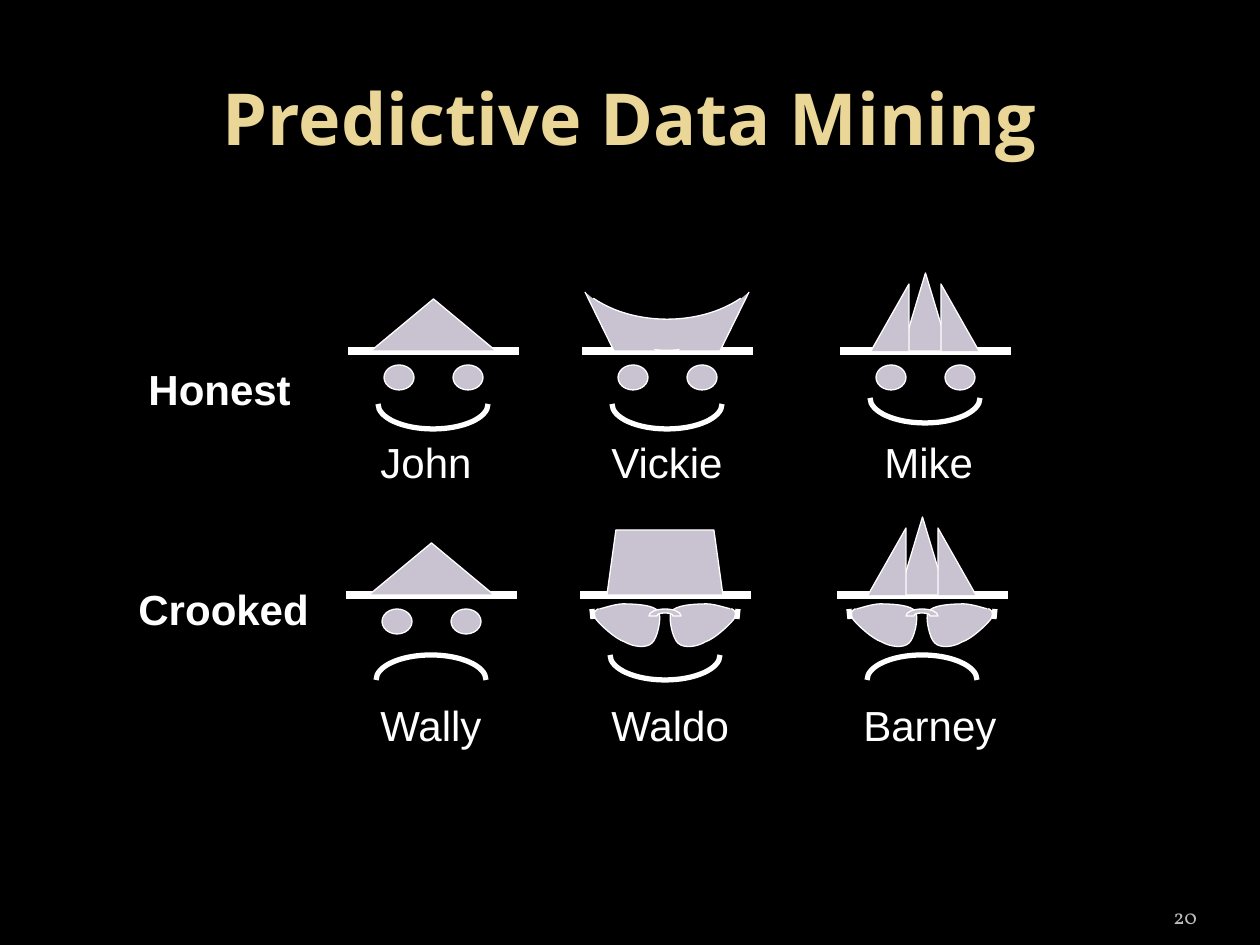
"""Builds the Predictive Data Mining slide: honest and crooked faces."""
from lxml.etree import SubElement
from pptx import Presentation
from pptx.dml.color import RGBColor
from pptx.enum.shapes import MSO_CONNECTOR, MSO_SHAPE
from pptx.enum.text import MSO_ANCHOR, MSO_AUTO_SIZE, PP_ALIGN
from pptx.oxml.ns import qn
from pptx.util import Pt

EMU = 914400 / 126
COLORS = {"background": "000000", "title": "EAD696", "number": "BDBDBD",
          "face": "C9C2D1", "line": "FFFFFF"}

HONEST_BRIM, CROOKED_BRIM = 351, 595
HONEST_NAME, CROOKED_NAME = 430, 693
FACES = [
    dict(name="John", box=(368, HONEST_NAME, 117), center=433, brim=HONEST_BRIM,
         hat="cone", eyes="plain", mouth="smile", mouth_top=404),
    dict(name="Vickie", box=(599, HONEST_NAME, 137), center=667, brim=HONEST_BRIM,
         hat="horns", eyes="plain", mouth="smile", mouth_top=404),
    dict(name="Mike", box=(872, HONEST_NAME, 115), center=925, brim=HONEST_BRIM,
         hat="peaks", eyes="plain", mouth="smile", mouth_top=398),
    dict(name="Wally", box=(368, CROOKED_NAME, 129), center=431, brim=CROOKED_BRIM,
         hat="cone", eyes="plain", mouth="frown", mouth_top=655),
    dict(name="Waldo", box=(599, CROOKED_NAME, 145), center=665, brim=CROOKED_BRIM,
         hat="top hat", eyes="glasses", mouth="smile", mouth_top=655),
    dict(name="Barney", box=(851, CROOKED_NAME, 159), center=922, brim=CROOKED_BRIM,
         hat="peaks", eyes="glasses", mouth="frown", mouth_top=655),
]
GROUPS = [("Honest", (136, 357, 168)), ("Crooked", (126, 577, 198))]

HORN = [(-82, -59), (-53, 0), (-11, 0)]
SIDE_PEAK = [(-16, 0), (-16, -67), (-54, 0)]
TOP_HAT = [(-58, 0), (-49, -65), (49, -65), (58, 0)]
LENS = [(-67, 17), (-63, 16), (-50, 9), (-40, 9), (-30, 8), (-13, 7), (-8, 13),
        (-4, 18), (-6, 40), (-11, 45), (-16, 51), (-29, 51), (-38, 47),
        (-48, 45), (-64, 33), (-69, 28), (-74, 22), (-71, 19), (-68, 17)]
BRIDGE = [(-8, 21), (-8, 19), (-5, 18), (0, 18), (5, 18), (8, 19), (8, 21),
          (8, 21), (16, 21), (16, 21), (16, 17), (9, 14), (0, 14),
          (-9, 14), (-16, 17), (-16, 21)]
MOUTH_HEIGHT = 25
MOUTH_HALF = [(0, 25), (-30, 25), (-55, 14), (-55, 0)]
TEMPLE = [(-72, 24), (-73, 14)]


def emu(px):
    return round(px * EMU)


def rgb(key):
    return RGBColor.from_string(COLORS[key])


def add_text(shapes, text, box, *, size=24, font="Arial", color="line", bold=False,
             align=PP_ALIGN.LEFT, anchor=MSO_ANCHOR.TOP, wrap=False, side_inset=None):
    frame = shapes.add_textbox(*map(emu, box)).text_frame
    frame.word_wrap = wrap
    frame.auto_size = MSO_AUTO_SIZE.NONE if wrap else MSO_AUTO_SIZE.SHAPE_TO_FIT_TEXT
    frame.vertical_anchor = anchor
    if side_inset is not None:
        frame.margin_left = frame.margin_right = side_inset
    paragraph = frame.paragraphs[0]
    paragraph.alignment = align
    run = paragraph.add_run()
    run.text = text
    run.font.size, run.font.name, run.font.bold = Pt(size), font, bold
    run.font.color.rgb = rgb(color)


def paint(shape, filled=True, width=0.75):
    shape.shadow.inherit = False
    if filled:
        shape.fill.solid()
        shape.fill.fore_color.rgb = rgb("face")
    else:
        shape.fill.background()
    shape.line.color.rgb = rgb("line")
    shape.line.width = Pt(width)
    return shape


def bend(shape):
    """Turns every three line segments into one cubic curve."""
    segments = list(shape._element.iter(qn("a:lnTo")))
    for first, second, third in zip(*[iter(segments)] * 3):
        first.tag = qn("a:cubicBezTo")
        for segment in (second, third):
            first.append(segment[0])
            segment.getparent().remove(segment)
    return shape


def mirror(points):
    return [(-x, y) for x, y in points]


class Face:
    """Draws parts of one face, measured from the middle of its brim."""

    def __init__(self, shapes, center, brim):
        self.shapes, self.center, self.brim = shapes, center, brim

    def place(self, point):
        return emu(self.center + point[0]), emu(self.brim + point[1])

    def outline(self, points, close=False, **style):
        start, *rest = map(self.place, points)
        builder = self.shapes.build_freeform(*start, scale=1.0)
        builder.add_line_segments(rest, close=close)
        return paint(builder.convert_to_shape(), **style)

    def curve(self, controls, **style):
        return bend(self.outline(controls, **style))

    def preset(self, kind, x, y, width, height):
        return paint(self.shapes.add_shape(kind, *self.place((x, y)),
                                           emu(width), emu(height)))

    def stroke(self, start, end, width):
        line = self.shapes.add_connector(MSO_CONNECTOR.STRAIGHT,
                                         *self.place(start), *self.place(end))
        line.line.color.rgb = rgb("line")
        line.line.width = Pt(width)
        SubElement(line._element.spPr, qn("a:effectLst"))

    def eyes(self, kind):
        if kind == "plain":
            for x in (-49, 20):
                self.preset(MSO_SHAPE.OVAL, x, 14, 30, 25)
            return
        self.curve(LENS).rotation = 6.6
        self.curve(mirror(LENS)).rotation = 353.2
        self.curve(BRIDGE, close=True)
        for temple in (TEMPLE, mirror(TEMPLE)):
            self.stroke(*temple, 3)

    def mouth(self, kind, top):
        half = MOUTH_HALF
        if kind == "frown":
            half = [(x, MOUTH_HEIGHT - y) for x, y in half]
        half = [(x, y + top - self.brim) for x, y in half]
        for side in (mirror(half), half):
            self.curve(side, filled=False, width=3)

    def hat(self, kind):
        self.stroke((-85, 0), (86, 0), 4.5)
        if kind == "cone":
            self.preset(MSO_SHAPE.ISOSCELES_TRIANGLE, -62, -52, 125, 52)
        elif kind == "top hat":
            self.outline(TOP_HAT, close=True)
        elif kind == "peaks":
            self.preset(MSO_SHAPE.ISOSCELES_TRIANGLE, -23, -78, 47, 78)
            for side in (mirror(SIDE_PEAK), SIDE_PEAK):
                self.outline(side)
        else:
            crown = self.preset(MSO_SHAPE.MOON, -26, -100, 52, 147)
            crown.adjustments[0] = 0.6
            crown.rotation = 270
            crown._element.spPr.find(qn("a:xfrm")).set("flipV", "1")
            for side in (HORN, mirror(HORN)):
                self.outline(side)


def main():
    prs = Presentation()
    prs.slide_width, prs.slide_height = emu(1260), emu(945)
    slide = prs.slides.add_slide(prs.slide_layouts[6])
    slide.background.fill.solid()
    slide.background.fill.fore_color.rgb = rgb("background")

    add_text(slide.shapes, "Predictive Data Mining", (63, 38, 1134, 157), size=41,
             font="Open Sans", color="title", bold=True, align=PP_ALIGN.CENTER,
             anchor=MSO_ANCHOR.MIDDLE, wrap=True)
    add_text(slide.shapes, "20", (1092, 885, 105, 50), size=12, font="Vollkorn",
             color="number", align=PP_ALIGN.RIGHT, anchor=MSO_ANCHOR.BOTTOM,
             wrap=True, side_inset=0)
    for label, box in GROUPS:
        add_text(slide.shapes, label, (*box, 63), bold=True)
    for person in FACES:
        shapes = slide.shapes.add_group_shape().shapes
        face = Face(shapes, person["center"], person["brim"])
        face.eyes(person["eyes"])
        face.mouth(person["mouth"], person["mouth_top"])
        face.hat(person["hat"])
        add_text(shapes, person["name"], (*person["box"], 63))
    prs.save("out.pptx")


if __name__ == "__main__":
    main()
